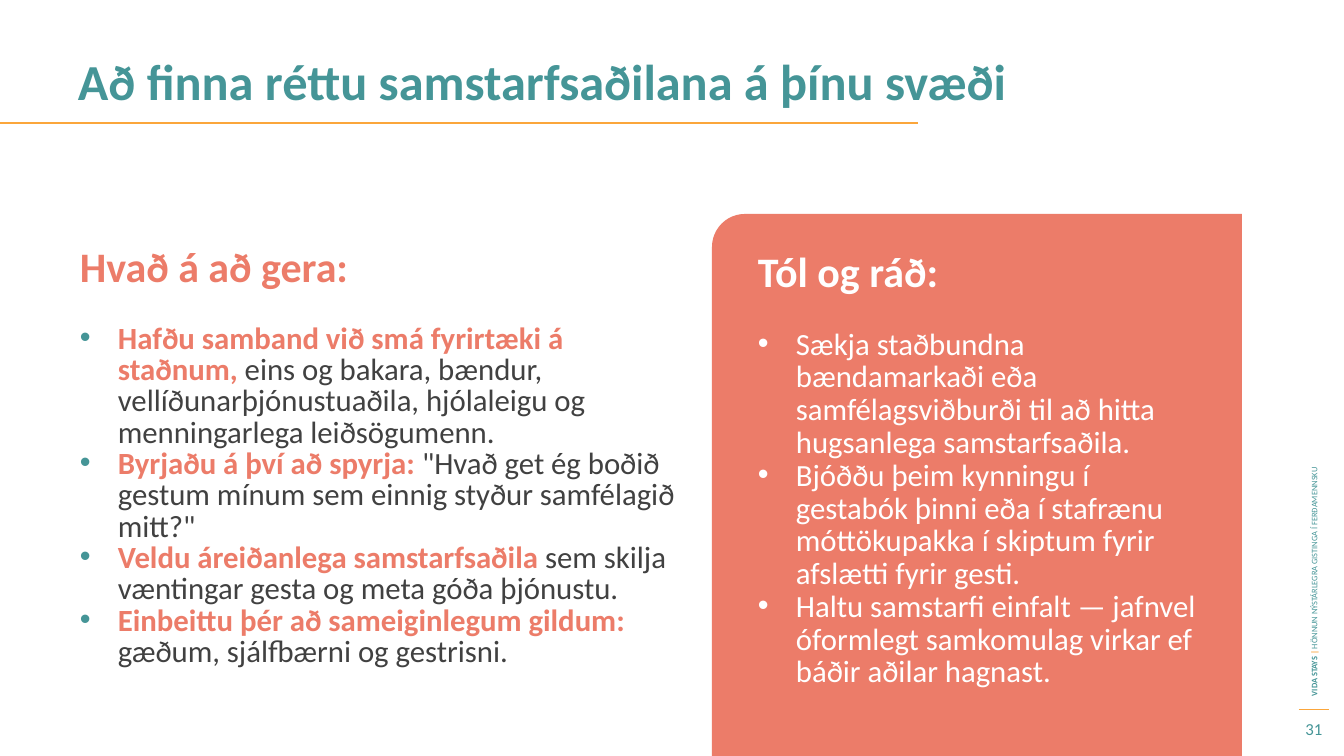
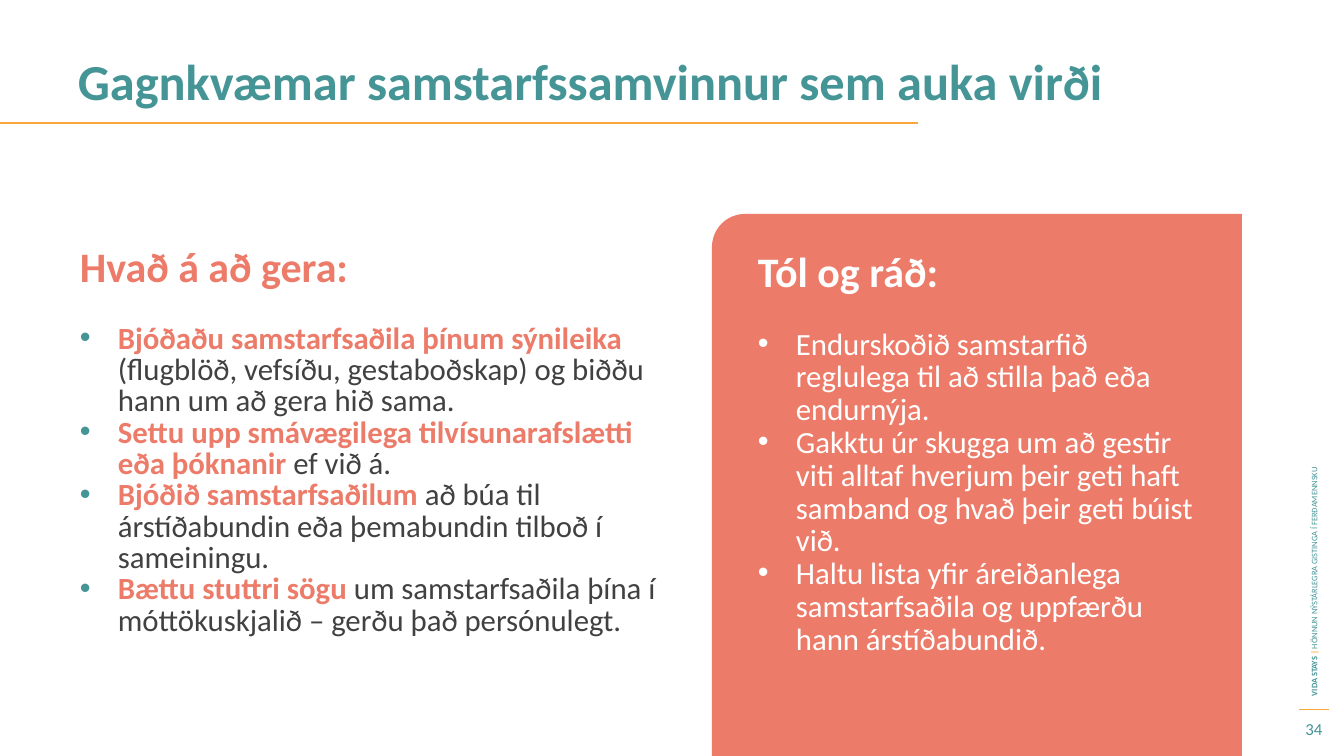
import lxml.etree
import pptx
import pptx.dml.color
import pptx.enum.shapes
import pptx.enum.text
import pptx.oxml.ns
import pptx.util

PX = 914400 / 100.8
TEAL = pptx.dml.color.RGBColor(0x45, 0x95, 0x97)
ORANGE = pptx.dml.color.RGBColor(0xFB, 0xA6, 0x3B)
CORAL = pptx.dml.color.RGBColor(0xEC, 0x7C, 0x69)
CHARCOAL = pptx.dml.color.RGBColor(0x41, 0x41, 0x41)
WHITE = pptx.dml.color.RGBColor(0xFF, 0xFF, 0xFF)
FONT = "Calibri"
BULLET_INDENT = 38
CORNER_RADIUS = 33
MIDDLE = pptx.enum.text.MSO_ANCHOR.MIDDLE
CENTER = pptx.enum.text.PP_ALIGN.CENTER

SLIDES = [
    {
        "title": "Að finna réttu samstarfsaðilana á þínu svæði",
        "number": "31",
        "actions": [
            ("Hafðu samband við smá fyrirtæki á staðnum, ",
             "eins og bakara, bændur, vellíðunarþjónustuaðila, hjólaleigu og "
             "menningarlega leiðsögumenn."),
            ("Byrjaðu á því að spyrja: ",
             '"Hvað get ég boðið gestum mínum sem einnig styður samfélagið mitt?"'),
            ("Veldu áreiðanlega samstarfsaðila ",
             "sem skilja væntingar gesta og meta góða þjónustu."),
            ("Einbeittu þér að sameiginlegum gildum: ",
             "gæðum, sjálfbærni og gestrisni."),
        ],
        "tips": [
            "Sækja staðbundna bændamarkaði eða samfélagsviðburði til að hitta "
            "hugsanlega samstarfsaðila.",
            "Bjóððu þeim kynningu í gestabók þinni eða í stafrænu móttökupakka "
            "í skiptum fyrir afslætti fyrir gesti.",
            "Haltu samstarfi einfalt — jafnvel óformlegt samkomulag virkar ef "
            "báðir aðilar hagnast.",
        ],
    },
    {
        "title": "Gagnkvæmar samstarfssamvinnur sem auka virði",
        "number": "34",
        "actions": [
            ("Bjóðaðu samstarfsaðila þínum sýnileika ",
             "(flugblöð, vefsíðu, gestaboðskap) og biððu hann um að gera hið sama."),
            ("Settu upp smávægilega tilvísunarafslætti eða þóknanir ",
             "ef við á."),
            ("Bjóðið samstarfsaðilum ",
             "að búa til árstíðabundin eða þemabundin tilboð í sameiningu."),
            ("Bættu stuttri sögu ",
             "um samstarfsaðila þína í móttökuskjalið – gerðu það persónulegt."),
        ],
        "tips": [
            "Endurskoðið samstarfið reglulega til að stilla það eða endurnýja.",
            "Gakktu úr skugga um að gestir viti alltaf hverjum þeir geti haft "
            "samband og hvað þeir geti búist við.",
            "Haltu lista yfir áreiðanlega samstarfsaðila og uppfærðu hann "
            "árstíðabundið.",
        ],
    },
]


def add_text(slide, box, paragraphs, line_pt=None, bullet_color=None):
    """Each paragraph lists (text, size, colour, bold) runs; a bullet colour
    makes bullets of all paragraphs in body size."""
    frame_box = slide.shapes.add_textbox(*(round(v * PX) for v in box))
    frame = frame_box.text_frame
    frame.word_wrap = True
    for index, runs in enumerate(paragraphs):
        paragraph = frame.paragraphs[0] if index == 0 else frame.add_paragraph()
        if bullet_color is not None and runs[0][1] == 22:
            properties = paragraph._p.get_or_add_pPr()
            properties.set("marL", str(round(BULLET_INDENT * PX)))
            properties.set("indent", str(round(-BULLET_INDENT * PX)))
            qn = pptx.oxml.ns.qn
            color = lxml.etree.SubElement(properties, qn("a:buClr"))
            lxml.etree.SubElement(color, qn("a:srgbClr"), val=str(bullet_color))
            lxml.etree.SubElement(properties, qn("a:buFont"), typeface="Arial")
            lxml.etree.SubElement(properties, qn("a:buChar"), char="•")
        if line_pt:
            paragraph.line_spacing = pptx.util.Pt(line_pt)
        for text, size, color, bold in runs:
            run = paragraph.add_run()
            run.text = text
            run.font.name = FONT
            run.font.size = pptx.util.Pt(size)
            run.font.color.rgb = color
            run.font.bold = bold
    return frame_box


def add_rule(slide, left, right, y, width_pt):
    rule = slide.shapes.add_connector(
        pptx.enum.shapes.MSO_CONNECTOR.STRAIGHT,
        *(round(v * PX) for v in (left, y, right, y)))
    rule.line.color.rgb = ORANGE
    rule.line.width = pptx.util.Pt(width_pt)
    lxml.etree.SubElement(rule._element.spPr, pptx.oxml.ns.qn("a:effectLst"))


deck = pptx.Presentation()
deck.slide_width = round(1344 * PX)
deck.slide_height = round(756 * PX)

for content in SLIDES:
    slide = deck.slides.add_slide(deck.slide_layouts[6])

    # Side footer and page number
    add_rule(slide, 1299, 1329, 710, 0.75)
    footer = add_text(slide, (1023, 405, 582, 20), [[
        ("VIDA STAYS ", 6, TEAL, True),
        ("| ", 6, ORANGE, True),
        ("HÖNNUN NÝSTÁRLEGRA GISTINGA Í FERÐAMENNSKU", 6, TEAL, False),
    ]])
    footer.rotation = 270
    footer.text_frame.vertical_anchor = MIDDLE
    page_number = add_text(slide, (1288, 712, 52, 34),
                           [[(content["number"], 12, TEAL, False)]])
    page_number.text_frame.vertical_anchor = MIDDLE
    page_number.text_frame.paragraphs[0].alignment = CENTER

    # Title
    add_text(slide, (68, 54, 1210, 89),
             [[(content["title"], 36, TEAL, True)]], line_pt=37.2)
    add_rule(slide, 0, 918, 123, 1.5)

    # Actions
    add_text(slide, (70, 245, 619, 89),
             [[("Hvað á að gera:", 30, CORAL, True)]], line_pt=29)
    add_text(slide, (70, 319, 619, 403),
             [[(lead, 22, CORAL, True), (detail, 22, CHARCOAL, False)]
              for lead, detail in content["actions"]],
             line_pt=22.4, bullet_color=TEAL)

    # Tips card, rounded at its top left corner
    card = slide.shapes.add_shape(
        pptx.enum.shapes.MSO_SHAPE.ROUND_1_RECTANGLE,
        *(round(v * PX) for v in (712, 214, 530, 542)))
    card.adjustments[0] = CORNER_RADIUS / 530
    card._element.spPr.xfrm.set("flipH", "1")
    card.shadow.inherit = False
    card.fill.solid()
    card.fill.fore_color.rgb = CORAL
    card.line.fill.background()
    tips = add_text(slide, (748, 258, 458, 362),
                    [[("Tól og ráð:", 30, WHITE, True)]]
                    + [[(tip, 22, WHITE, False)] for tip in content["tips"]],
                    line_pt=23.4, bullet_color=WHITE)
    tips.text_frame.paragraphs[1].space_before = pptx.util.Pt(23.4)

deck.save("out.pptx")
